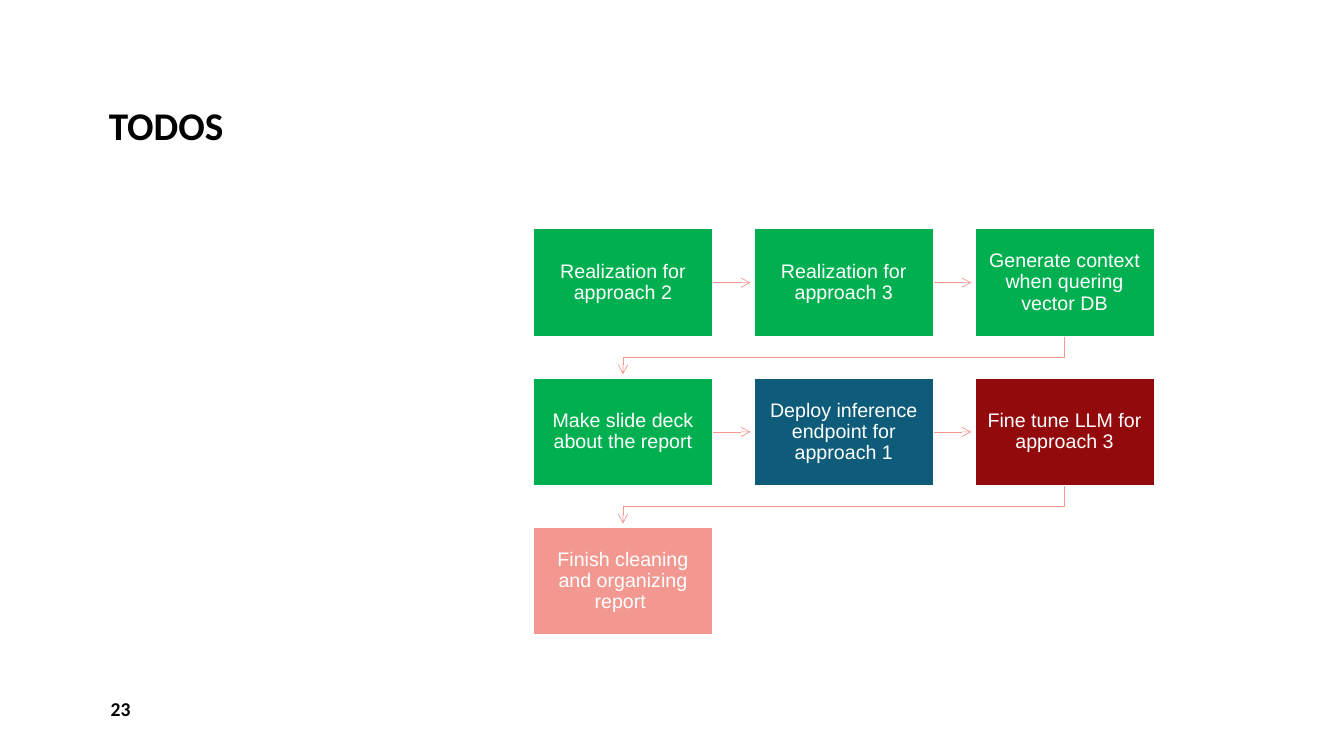
from dataclasses import dataclass

from lxml import etree
from pptx import Presentation
from pptx.dml.color import RGBColor
from pptx.enum.shapes import MSO_CONNECTOR, MSO_SHAPE
from pptx.enum.text import MSO_ANCHOR, MSO_AUTO_SIZE, PP_ALIGN
from pptx.oxml.ns import qn
from pptx.util import Pt

RECTANGLE = MSO_SHAPE.RECTANGLE
STRAIGHT = MSO_CONNECTOR.STRAIGHT
MIDDLE, BOTTOM = MSO_ANCHOR.MIDDLE, MSO_ANCHOR.BOTTOM
LEFT, CENTER = PP_ALIGN.LEFT, PP_ALIGN.CENTER
NO_AUTOFIT = MSO_AUTO_SIZE.NONE


@dataclass(frozen=True)
class Theme:
    black: str = "000000"
    white: str = "FFFFFF"
    done: str = "00B050"
    deploy: str = "0E5C79"
    tuning: str = "930A0D"
    cleanup: str = "F39891"
    arrow: str = "F39891"
    heading_font: str = "Calibri"
    step_font: str = "Arial"
    title_size: int = 28
    text_size: int = 14
    border_width: float = 1
    arrow_width: float = 0.5


@dataclass(frozen=True)
class Box:
    left: float
    top: float
    width: float
    height: float

    @property
    def lengths(self):
        return Pt(self.left), Pt(self.top), Pt(self.width), Pt(self.height)


THEME = Theme()
COLUMNS = 3
STEP_WIDTH, STEP_HEIGHT = 128.2, 77
ARROW_LENGTH = 27
STEPS = [
    ("Realization for approach 2", THEME.done),
    ("Realization for approach 3", THEME.done),
    ("Generate context when quering vector DB", THEME.done),
    ("Make slide deck about the report", THEME.done),
    ("Deploy inference endpoint for approach 1", THEME.deploy),
    ("Fine tune LLM for approach 3", THEME.tuning),
    ("Finish cleaning and organizing report ", THEME.cleanup),
]


def write_text(shape, text, *, size=THEME.text_size, font=THEME.heading_font,
               color=THEME.black, bold=False, align=LEFT, anchor=MIDDLE,
               line_spacing=1.0, inset=None):
    frame = shape.text_frame
    frame.word_wrap = True
    frame.auto_size = NO_AUTOFIT
    frame.vertical_anchor = anchor
    if inset is not None:
        frame.margin_left = frame.margin_right = Pt(inset)
        frame.margin_top = frame.margin_bottom = Pt(inset)
    paragraph = frame.paragraphs[0]
    paragraph.alignment = align
    paragraph.line_spacing = line_spacing
    run = paragraph.add_run()
    run.text = text
    run.font.size = Pt(size)
    run.font.name = font
    run.font.bold = bold
    run.font.color.rgb = RGBColor.from_string(color)


def add_title(slide, box):
    title = slide.shapes.title
    title.left, title.top, title.width, title.height = box.lengths
    write_text(title, "TODOS", size=THEME.title_size, bold=True,
               anchor=BOTTOM, line_spacing=0.9)


def add_page_number(slide, box):
    write_text(slide.shapes.add_textbox(*box.lengths), "23", bold=True)


def add_step(slide, box, text, fill):
    step = slide.shapes.add_shape(RECTANGLE, *box.lengths)
    step.shadow.inherit = False
    step.fill.solid()
    step.fill.fore_color.rgb = RGBColor.from_string(fill)
    step.line.color.rgb = RGBColor.from_string(THEME.white)
    step.line.width = Pt(THEME.border_width)
    write_text(step, text, font=THEME.step_font, color=THEME.white,
               align=CENTER, line_spacing=0.9, inset=6.5)


def style_arrow(shape):
    shape.line.color.rgb = RGBColor.from_string(THEME.arrow)
    shape.line.width = Pt(THEME.arrow_width)
    outline = shape.element.spPr.find(qn("a:ln"))
    etree.SubElement(outline, qn("a:tailEnd"), type="arrow")


def add_row_arrow(slide, box):
    start = box.left + box.width
    middle = Pt(box.top + box.height / 2)
    arrow = slide.shapes.add_connector(
        STRAIGHT, Pt(start), middle, Pt(start + ARROW_LENGTH), middle)
    style_arrow(arrow)
    etree.SubElement(arrow.element.spPr, qn("a:effectLst"))


def add_return_arrow(slide, box, first_left):
    start = Pt(box.left + box.width / 2)
    end = Pt(first_left + box.width / 2)
    bottom = box.top + box.height
    turn = Pt(bottom + 14.8)
    builder = slide.shapes.build_freeform(start, Pt(bottom))
    builder.add_line_segments(
        [(start, turn), (end, turn), (end, Pt(bottom + ARROW_LENGTH))],
        close=False)
    arrow = builder.convert_to_shape()
    arrow.shadow.inherit = False
    arrow.fill.background()
    style_arrow(arrow)


def add_flow(slide, box):
    rows = -(-len(STEPS) // COLUMNS)
    column_pitch = (box.width - STEP_WIDTH) / (COLUMNS - 1)
    row_pitch = (box.height - STEP_HEIGHT) / (rows - 1)
    for index, (text, fill) in enumerate(STEPS):
        row, column = divmod(index, COLUMNS)
        step_box = Box(box.left + column * column_pitch,
                       box.top + row * row_pitch, STEP_WIDTH, STEP_HEIGHT)
        if index < len(STEPS) - 1:
            if column < COLUMNS - 1:
                add_row_arrow(slide, step_box)
            else:
                add_return_arrow(slide, step_box, box.left)
        add_step(slide, step_box, text, fill)


def main():
    presentation = Presentation()
    presentation.slide_width = Pt(960)
    presentation.slide_height = Pt(540)
    slide = presentation.slides.add_slide(presentation.slide_layouts[5])
    add_title(slide, Box(70.6, 5.8, 819.4, 104.4))
    add_page_number(slide, Box(72, 491.8, 210.2, 28.8))
    add_flow(slide, Box(380.9, 163.4, 443.6, 290.2))
    presentation.save("out.pptx")


if __name__ == "__main__":
    main()
